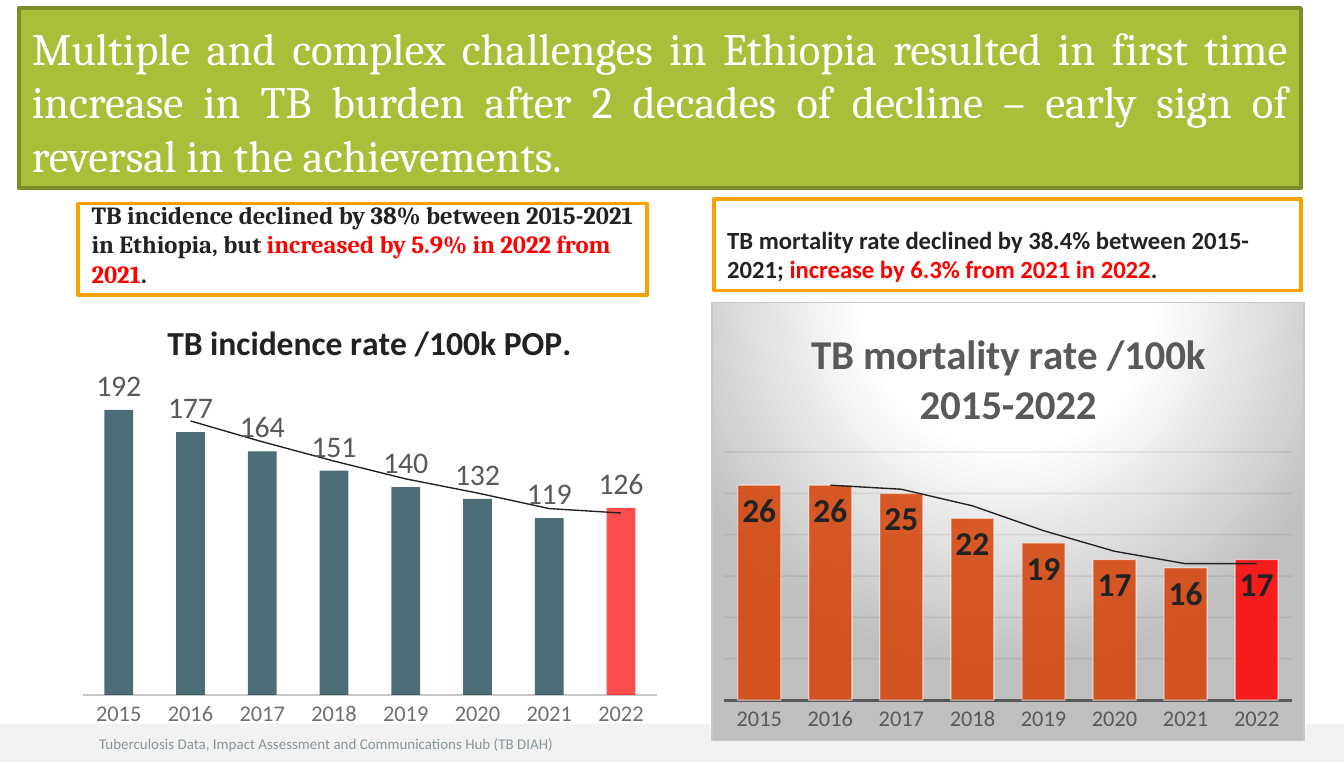
"""Builds a slide on the reversal of TB incidence and mortality trends in Ethiopia."""
from pptx import Presentation, chart as ch, dml, util as u
from pptx.chart import data
from pptx.dml import color
from pptx.enum import chart as kinds, shapes, text
from pptx.oxml import ns, parse_xml

Pt = u.Pt
COLORS = {
    "band": "F2F2F2", "footer": "879499", "green": "A7BF39", "olive": "7C8D2A",
    "white": "FFFFFF", "amber": "FAA000", "ink": "222222", "red": "FF0000",
    "teal": "002F3C", "orange": "D44106", "gray": "595959", "years": "6F6F6F",
    "rule": "C8C8C8", "grid": "2D2D2D", "shade": "BFBFBF",
}
NAMESPACES = ns.nsdecls("c", "a")


def rgb(name):
    return color.RGBColor.from_string(COLORS[name])


def style(font, size, tone, bold=False, face="Calibri"):
    formats = {"size": Pt(size), "bold": bold, "name": face}
    for key, value in formats.items():
        setattr(font, key, value)
    font.color.rgb = rgb(tone)


deck = Presentation()
deck.slide_width, deck.slide_height = Pt(720), Pt(408)
slide = deck.slides.add_slide(deck.slide_layouts[6])

band = slide.shapes.add_shape(shapes.MSO_SHAPE.RECTANGLE, 0, Pt(387.5), Pt(720), Pt(20.5))
band.shadow.inherit = False
band.fill.solid()
band.fill.fore_color.rgb = rgb("band")
band.line.fill.background()

footer = slide.shapes.add_textbox(Pt(46), Pt(390), Pt(360), Pt(17)).text_frame
footer.word_wrap = True
source = footer.paragraphs[0].add_run()
source.text = "Tuberculosis Data, Impact Assessment and Communications Hub (TB DIAH)"
style(source.font, 8, "footer")

headline = ("Multiple and complex challenges in Ethiopia resulted in first time increase in TB burden "
            "after 2 decades of decline – early sign of reversal in the achievements.")
LEFT, JUSTIFY = text.PP_ALIGN.LEFT, text.PP_ALIGN.JUSTIFY
panels = [
    ((10, 4.3, 687, 96.5), "green", "olive", JUSTIFY, 0, 24, False, "Cambria",
     [(headline, "white")]),
    ((42, 109, 304.5, 49), "white", "amber", LEFT, 8, 13.2, True, "Cambria",
     [("TB incidence declined by 38% between 2015-2021 in Ethiopia, but ", "ink"),
      ("increased by 5.9% in 2022 from 2021", "red"), (".", "ink")]),
    ((382.5, 106.5, 314.5, 49), "white", "amber", LEFT, 8, 13.2, True, "Calibri",
     [("TB mortality rate declined by 38.4% between 2015-2021; ", "ink"),
      ("increase by 6.3% from 2021 in 2022", "red"), (".", "ink")]),
]
for place, fill, edge, align, after, size, bold, face, pieces in panels:
    panel = slide.shapes.add_shape(shapes.MSO_SHAPE.RECTANGLE, *map(Pt, place))
    panel.shadow.inherit = False
    panel.fill.solid()
    panel.fill.fore_color.rgb = rgb(fill)
    panel.line.color.rgb = rgb(edge)
    panel.line.width = Pt(2)
    panel.text_frame.word_wrap = True
    panel.text_frame.vertical_anchor = text.MSO_ANCHOR.BOTTOM
    message = panel.text_frame.paragraphs[0]
    message.alignment = align
    message.space_after = Pt(after)
    for wording, tone in pieces:
        piece = message.add_run()
        piece.text = wording
        style(piece.font, size, tone, bold, face)

POSITION = kinds.XL_LABEL_POSITION
rates = [
    {"title": "TB incidence rate /100k POP.", "series": "TB incidence rate /100k POP.",
     "values": (192, 177, 164, 151, 140, 132, 119, 126), "place": (39, 159, 318, 235.5),
     "heading": (18, "ink", True), "label": (16, "gray", False), "spot": POSITION.OUTSIDE_END,
     "years": "years", "axis": ("rule", 1.25), "top": 250, "step": 50, "gap": 150, "overlap": -25,
     "bar": "teal", "edge": None, "grid": False, "alpha": {"teal": 70, "red": 70}},
    {"title": "TB mortality rate /100k 2015-2022", "series": "Series 1",
     "values": (26, 26, 25, 22, 19, 17, 16, 17), "place": (381, 161.5, 318, 235.5),
     "heading": (22, "gray", True), "label": (18, "ink", True), "spot": POSITION.INSIDE_END,
     "years": "gray", "axis": ("gray", 1.5), "top": 30, "step": 5, "gap": 65, "overlap": 0,
     "bar": "orange", "edge": "white", "grid": True,
     "alpha": {"orange": 85, "red": 85, "white": 50, "grid": 10}},
]
charts = []
for rate in rates:
    figures = data.CategoryChartData()
    figures.categories = [str(year) for year in range(2015, 2023)]
    figures.add_series(rate["series"], rate["values"])
    chart = slide.shapes.add_chart(
        kinds.XL_CHART_TYPE.COLUMN_CLUSTERED, *map(Pt, rate["place"]), figures).chart
    charts.append(chart)
    style(chart.font, 10, "ink")
    chart.has_legend = False
    heading = chart.chart_title.text_frame.paragraphs[0].add_run()
    heading.text = rate["title"]
    style(heading.font, *rate["heading"])
    chart.chart_title.include_in_layout = False

    years, scale = chart.category_axis, chart.value_axis
    years.major_tick_mark = kinds.XL_TICK_MARK.NONE
    style(years.tick_labels.font, 12, rate["years"])
    tone, width = rate["axis"]
    years.format.line.color.rgb = rgb(tone)
    years.format.line.width = Pt(width)
    limits = {"minimum_scale": 0, "maximum_scale": rate["top"], "major_unit": rate["step"],
              "has_major_gridlines": rate["grid"], "visible": False}
    for key, value in limits.items():
        setattr(scale, key, value)
    if rate["grid"]:
        scale.major_gridlines.format.line.color.rgb = rgb("grid")
        scale.major_gridlines.format.line.width = Pt(0.75)

    plot = chart.plots[0]
    plot.gap_width, plot.overlap, plot.vary_by_categories = rate["gap"], rate["overlap"], False
    bars = plot.series[0]
    bars.invert_if_negative = False
    for part, tone in ((bars, rate["bar"]), (bars.points[7], "red")):
        part.format.fill.solid()
        part.format.fill.fore_color.rgb = rgb(tone)
        if rate["edge"]:
            part.format.line.color.rgb = rgb(rate["edge"])
            part.format.line.width = Pt(0.75)
    labels = bars.data_labels
    labels.show_value = True
    labels.position = rate["spot"]
    style(labels.font, *rate["label"])

    trend = parse_xml(
        f'<c:trendline {NAMESPACES}><c:spPr><a:ln w="{Pt(0.75)}"><a:solidFill>'
        f'<a:srgbClr val="{COLORS["ink"]}"/></a:solidFill></a:ln></c:spPr>'
        '<c:trendlineType val="movingAvg"/><c:period val="2"/>'
        '<c:dispRSqr val="0"/><c:dispEq val="0"/></c:trendline>')
    next(chart.element.iter(ns.qn("c:cat"))).addprevious(trend)
    opacity = {COLORS[tone]: share for tone, share in rate["alpha"].items()}
    for shade in chart.element.iter(ns.qn("a:srgbClr")):
        if shade.get("val") in opacity:
            shade.append(parse_xml(
                f'<a:alpha {NAMESPACES} val="{opacity[shade.get("val")] * 1000}"/>'))

incidence, mortality = charts
area = next(incidence.element.iter(ns.qn("c:plotArea")))
for old in area.findall(ns.qn("c:layout")):
    area.remove(old)
bounds = {"x": 0.017, "y": 0.061, "w": 0.967, "h": 0.844}
area.insert(0, parse_xml(
    f'<c:layout {NAMESPACES}><c:manualLayout><c:layoutTarget val="inner"/>'
    '<c:xMode val="edge"/><c:yMode val="edge"/>'
    + "".join(f'<c:{side} val="{share}"/>' for side, share in bounds.items())
    + '</c:manualLayout></c:layout>'))

stops = "".join(f'<a:gs pos="{spot * 1000}"><a:srgbClr val="{COLORS[tone]}"/></a:gs>'
                for spot, tone in ((0, "white"), (39, "white"), (100, "shade")))
mortality.element.find(ns.qn("c:chart")).addnext(parse_xml(
    f'<c:spPr {NAMESPACES}><a:gradFill><a:gsLst>{stops}</a:gsLst><a:path path="circle">'
    '<a:fillToRect l="50000" t="-80000" r="50000" b="180000"/></a:path></a:gradFill>'
    f'<a:ln w="{Pt(0.75)}"><a:solidFill><a:srgbClr val="{COLORS["rule"]}"/></a:solidFill></a:ln>'
    '</c:spPr>'))

deck.save("out.pptx")
